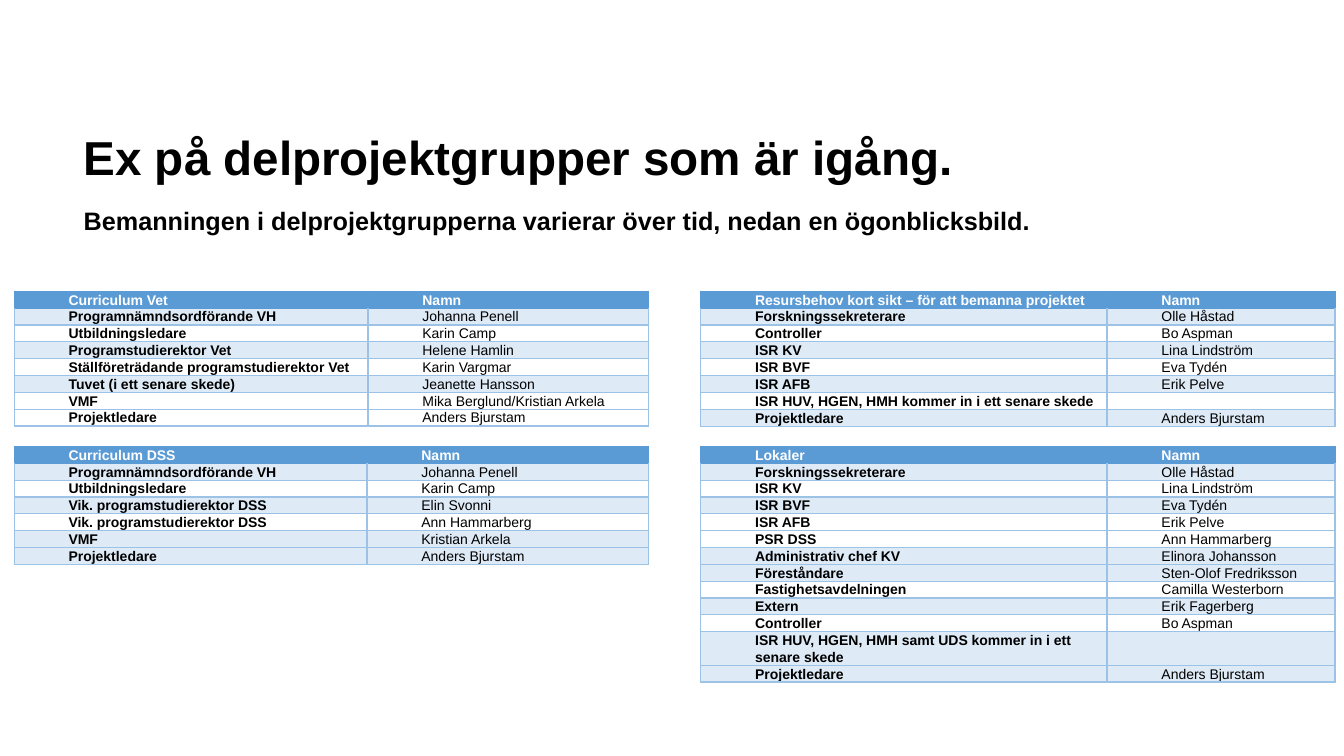
from lxml.etree import SubElement
from pptx import Presentation
from pptx.dml.color import RGBColor
from pptx.enum.text import MSO_ANCHOR, MSO_AUTO_SIZE, PP_ALIGN
from pptx.oxml.ns import qn
from pptx.util import Inches, Pt

BLACK = RGBColor(0x00, 0x00, 0x00)
WHITE = RGBColor(0xFF, 0xFF, 0xFF)
HEADER_BLUE = RGBColor(0x5B, 0x9B, 0xD5)
BORDER_BLUE = RGBColor(0x9C, 0xC2, 0xE5)
BAND_BLUE = RGBColor(0xDE, 0xEA, 0xF6)

LEFT, RIGHT = Inches(0.14), Inches(6.95)
UPPER, LOWER = Inches(2.89), Inches(4.43)
GROUP_WIDTH = Inches(6.29)
LINE_HEIGHT = Pt(12)
INDENT = Inches(0.47)
CELL_MARGIN = Inches(0.07)

# left, top, width of the role column, shaded rows, (role, name) rows
GROUPS = [
    (RIGHT, LOWER, Inches(4.03), {1, 3, 6, 7, 9, 11, 12}, [
        ("Lokaler", "Namn"),
        ("Forskningssekreterare", "Olle Håstad"),
        ("ISR KV", "Lina Lindström"),
        ("ISR BVF", "Eva Tydén"),
        ("ISR AFB", "Erik Pelve"),
        ("PSR DSS", "Ann Hammarberg"),
        ("Administrativ chef KV", "Elinora Johansson"),
        ("Föreståndare", "Sten-Olof Fredriksson"),
        ("Fastighetsavdelningen", "Camilla Westerborn"),
        ("Extern", "Erik Fagerberg"),
        ("Controller", "Bo Aspman"),
        ("ISR HUV, HGEN, HMH samt UDS kommer in i ett senare skede", ""),
        ("Projektledare", "Anders Bjurstam"),
    ]),
    (RIGHT, UPPER, Inches(4.03), {1, 3, 5, 7}, [
        ("Resursbehov kort sikt – för att bemanna projektet", "Namn"),
        ("Forskningssekreterare", "Olle Håstad"),
        ("Controller", "Bo Aspman"),
        ("ISR KV", "Lina Lindström"),
        ("ISR BVF", "Eva Tydén"),
        ("ISR AFB", "Erik Pelve"),
        ("ISR HUV, HGEN, HMH kommer in i ett senare skede", ""),
        ("Projektledare", "Anders Bjurstam"),
    ]),
    (LEFT, LOWER, Inches(3.5), {1, 3, 5, 6}, [
        ("Curriculum DSS", "Namn"),
        ("Programnämndsordförande VH", "Johanna Penell"),
        ("Utbildningsledare", "Karin Camp"),
        ("Vik. programstudierektor DSS", "Elin Svonni"),
        ("Vik. programstudierektor DSS", "Ann Hammarberg"),
        ("VMF", "Kristian Arkela"),
        ("Projektledare", "Anders Bjurstam"),
    ]),
    (LEFT, UPPER, Inches(3.51), {1, 3, 5}, [
        ("Curriculum Vet", "Namn"),
        ("Programnämndsordförande VH", "Johanna Penell"),
        ("Utbildningsledare", "Karin Camp"),
        ("Programstudierektor Vet", "Helene Hamlin"),
        ("Ställföreträdande programstudierektor Vet", "Karin Vargmar"),
        ("Tuvet (i ett senare skede)", "Jeanette Hansson"),
        ("VMF", "Mika Berglund/Kristian Arkela"),
        ("Projektledare", "Anders Bjurstam"),
    ]),
]


def write(paragraph, text, size=10, color=BLACK, bold=True, spacing=LINE_HEIGHT):
    """Append a formatted run and set the paragraph's exact line spacing."""
    paragraph.alignment = PP_ALIGN.LEFT
    paragraph.line_spacing = spacing
    paragraph.font.size = Pt(size)
    if text:
        run = paragraph.add_run()
        run.text = text
        run.font.name = "Arial"
        run.font.size = Pt(size)
        run.font.bold = bold
        run.font.color.rgb = color


def draw_borders(cell, side_colors):
    properties = cell._tc.get_or_add_tcPr()
    for side, color in side_colors.items():
        line = SubElement(properties, qn(f"a:ln{side}"), w=str(Pt(1)))
        fill = SubElement(line, qn("a:solidFill"))
        SubElement(fill, qn("a:srgbClr"), val=str(color))


prs = Presentation()
prs.slide_width, prs.slide_height = Inches(13.33), Inches(7.5)
slide = prs.slides.add_slide(prs.slide_layouts[5])

title = slide.shapes.title
title.left, title.top = Inches(0.83), Inches(1.34)
title.width, title.height = Inches(11.64), Inches(1)
heading = title.text_frame
heading.margin_left = heading.margin_right = 0
heading.margin_top = heading.margin_bottom = 0
heading.vertical_anchor = MSO_ANCHOR.BOTTOM
heading.auto_size = MSO_AUTO_SIZE.NONE
heading.word_wrap = True
headline = heading.paragraphs[0]
write(headline, "Ex på delprojektgrupper som är igång.", size=34, spacing=Pt(36))
headline.add_line_break()
write(headline, "Bemanningen i delprojektgrupperna varierar över tid, nedan en ögonblicksbild.",
      size=18, spacing=Pt(36))

for left, top, role_width, shaded, members in GROUPS:
    group = slide.shapes.add_table(len(members), 2, left, top, GROUP_WIDTH,
                                   LINE_HEIGHT * len(members)).table
    group.horz_banding = False
    group.columns[0].width = role_width
    group.columns[1].width = GROUP_WIDTH - role_width
    for row, member in enumerate(members):
        is_header = row == 0
        is_long = len(member[0]) > 50
        group.rows[row].height = LINE_HEIGHT * (2 if is_long else 1)
        side = HEADER_BLUE if is_header else BORDER_BLUE
        above = HEADER_BLUE if row < 2 else BORDER_BLUE
        for column, text in enumerate(member):
            cell = group.cell(row, column)
            cell.margin_left = cell.margin_right = CELL_MARGIN
            cell.margin_top = cell.margin_bottom = 0
            if is_long:
                cell.vertical_anchor = MSO_ANCHOR.TOP
            draw_borders(cell, {"L": side, "R": side, "T": above, "B": side})
            if is_header or row in shaded:
                cell.fill.solid()
                cell.fill.fore_color.rgb = HEADER_BLUE if is_header else BAND_BLUE
            else:
                cell.fill.background()
            entry = cell.text_frame.paragraphs[0]
            entry._p.get_or_add_pPr().set("marL", str(INDENT))
            write(entry, text, color=WHITE if is_header else BLACK,
                  bold=is_header or column == 0)

prs.save("out.pptx")
